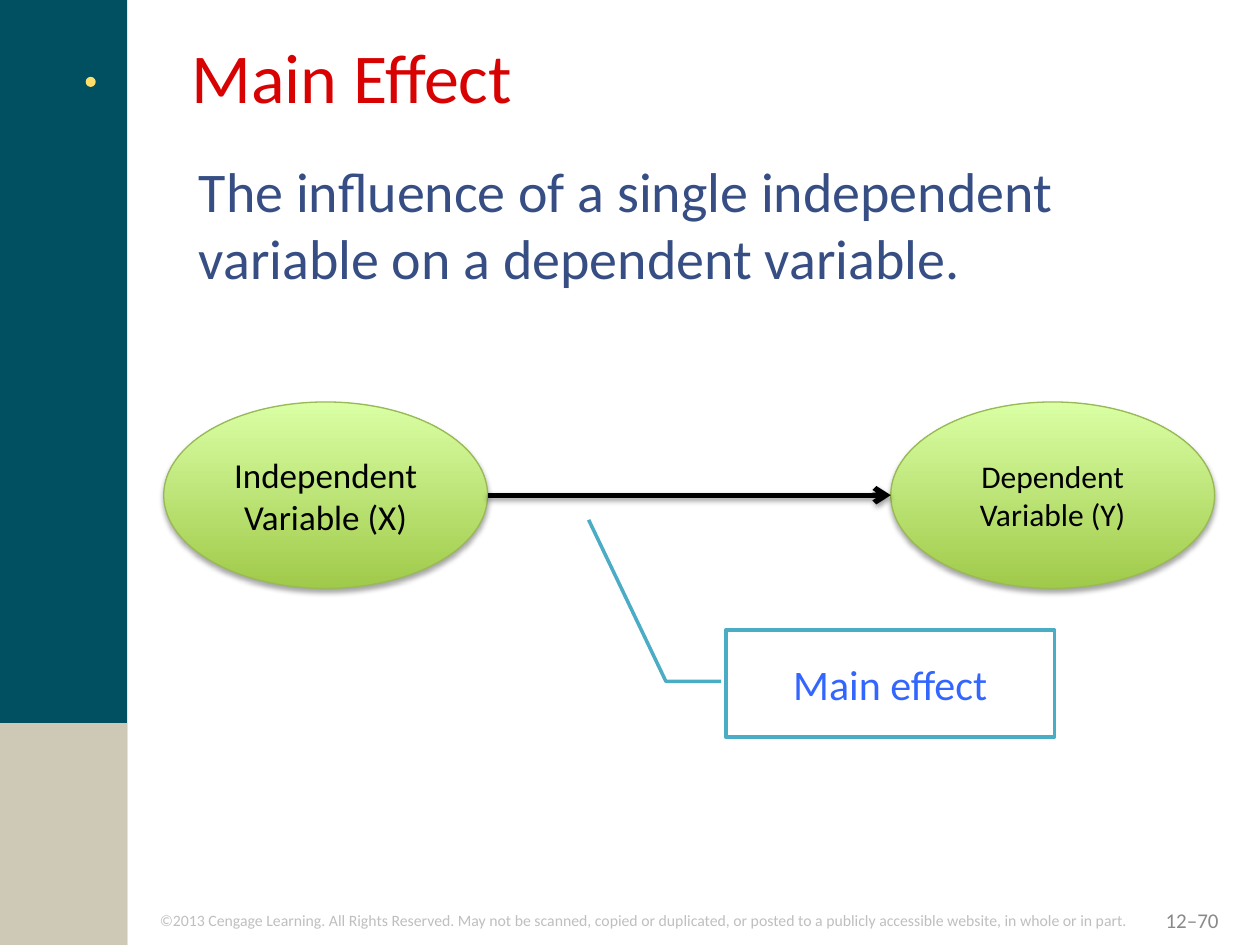
"""Build the Main Effect slide with its variable diagram."""
from lxml.etree import SubElement
from pptx import Presentation
from pptx.dml.color import RGBColor
from pptx.enum.shapes import MSO_CONNECTOR, MSO_SHAPE
from pptx.enum.text import MSO_ANCHOR, PP_ALIGN
from pptx.oxml.ns import qn
from pptx.util import Inches, Pt

TEAL = RGBColor(0x00, 0x50, 0x61)
SAND = RGBColor(0xCE, 0xC9, 0xB6)
YELLOW = RGBColor(0xFF, 0xDE, 0x6A)
SILVER = RGBColor(0xBF, 0xBF, 0xBF)
GRAY = RGBColor(0x89, 0x89, 0x89)
RED = RGBColor(0xD8, 0x02, 0x02)
NAVY = RGBColor(0x36, 0x4E, 0x84)
BLACK = RGBColor(0x00, 0x00, 0x00)
WHITE = RGBColor(0xFF, 0xFF, 0xFF)
GREEN = RGBColor(0xA0, 0xCA, 0x4A)
LIME = RGBColor(0xDA, 0xFF, 0xA5)
OLIVE = RGBColor(0x98, 0xB9, 0x55)
AQUA = RGBColor(0x4B, 0xAC, 0xC6)
BLUE = RGBColor(0x33, 0x66, 0xFF)


def write(shape, lines, size, color, align=PP_ALIGN.LEFT, anchor=MSO_ANCHOR.TOP):
    """Fill a shape with one paragraph per line."""
    frame = shape.text_frame
    for name, value in {"word_wrap": True, "vertical_anchor": anchor}.items():
        setattr(frame, name, value)
    frame.text = "\n".join(lines)
    for para in frame.paragraphs:
        para.alignment = align
        for span in para.runs:
            for name, value in {"name": "Calibri", "size": Pt(size)}.items():
                setattr(span.font, name, value)
            span.font.color.rgb = color


def add_shadow(shape, opacity, distance):
    """Give a shape a soft shadow that falls straight down."""
    effects = SubElement(shape._element.spPr, qn("a:effectLst"))
    settings = {"blurRad": Pt(3.1), "dist": Pt(distance), "dir": 5400000, "rotWithShape": 0}
    shadow = SubElement(effects, qn("a:outerShdw"), {key: str(value) for key, value in settings.items()})
    tint = SubElement(shadow, qn("a:srgbClr"), val=str(BLACK))
    SubElement(tint, qn("a:alpha"), val=str(opacity * 1000))


deck = Presentation()
for name, value in {"slide_width": Inches(10), "slide_height": Inches(7.5)}.items():
    setattr(deck, name, value)
page = deck.slides.add_slide(deck.slide_layouts[6])

for kind, place, color in (
    (MSO_SHAPE.RECTANGLE, (0, 0, 1.01, 7.5), TEAL),
    (MSO_SHAPE.RECTANGLE, (0, 5.74, 1.01, 1.76), SAND),
    (MSO_SHAPE.OVAL, (0.68, 0.61, 0.08, 0.08), YELLOW),
):
    block = page.shapes.add_shape(kind, *map(Inches, place))
    block.shadow.inherit = False
    block.fill.solid()
    block.fill.fore_color.rgb = color
    block.line.fill.background()

notice = (
    "©2013 Cengage Learning. All Rights Reserved. May not be scanned, copied or duplicated, "
    "or posted to a publicly accessible website, in whole or in part."
)
definition = "The influence of a single independent variable on a dependent variable."
for place, text, size, color, align, anchor in (
    ((1.17, 7.18, 8.83, 0.25), notice, 9, SILVER, PP_ALIGN.LEFT, MSO_ANCHOR.TOP),
    ((7.44, 7.1, 2.33, 0.4), "12–70", 12, GRAY, PP_ALIGN.RIGHT, MSO_ANCHOR.MIDDLE),
    ((1.42, 0.22, 8.49, 0.96), "Main Effect", 40, RED, PP_ALIGN.LEFT, MSO_ANCHOR.TOP),
    ((1.42, 1.19, 8, 5.56), definition, 32, NAVY, PP_ALIGN.LEFT, MSO_ANCHOR.TOP),
):
    box = page.shapes.add_textbox(*map(Inches, place))
    write(box, [text], size, color, align, anchor)
box.text_frame.paragraphs[0]._p.get_or_add_pPr().set("marL", str(Inches(0.06)))

for left, lines, size in (
    (1.3, ["Independent", "Variable (X)"], 20),
    (7.07, ["Dependent", "Variable (Y)"], 18),
):
    variable = page.shapes.add_shape(
        MSO_SHAPE.OVAL, Inches(left), Inches(3.19), Inches(2.57), Inches(1.48)
    )
    variable.fill.gradient()
    variable.fill.gradient_angle = 90
    for stop, color in zip(variable.fill.gradient_stops, (GREEN, LIME)):
        stop.color.rgb = color
    variable.line.color.rgb = OLIVE
    variable.line.width = Pt(0.75)
    add_shadow(variable, 35, 1.8)
    write(variable, lines, size, BLACK, PP_ALIGN.CENTER, MSO_ANCHOR.MIDDLE)

arrow = page.shapes.add_connector(
    MSO_CONNECTOR.STRAIGHT, Inches(3.87), Inches(3.93), Inches(7.07), Inches(3.93)
)
arrow.line.color.rgb = BLACK
arrow.line.width = Pt(3)
SubElement(arrow.line._get_or_add_ln(), qn("a:tailEnd"), type="arrow")
add_shadow(arrow, 38, 1.6)

callout = page.shapes.add_shape(
    MSO_SHAPE.LINE_CALLOUT_2, Inches(5.76), Inches(5), Inches(2.61), Inches(0.85)
)
for index, value in enumerate((0.48, -0.014, 0.48, -0.182, -1.029, -0.417)):
    callout.adjustments[index] = value
callout.shadow.inherit = False
callout.fill.solid()
callout.fill.fore_color.rgb = WHITE
callout.line.color.rgb = AQUA
callout.line.width = Pt(2)
write(callout, ["Main effect"], 24, BLUE, PP_ALIGN.CENTER, MSO_ANCHOR.MIDDLE)

deck.save("out.pptx")
